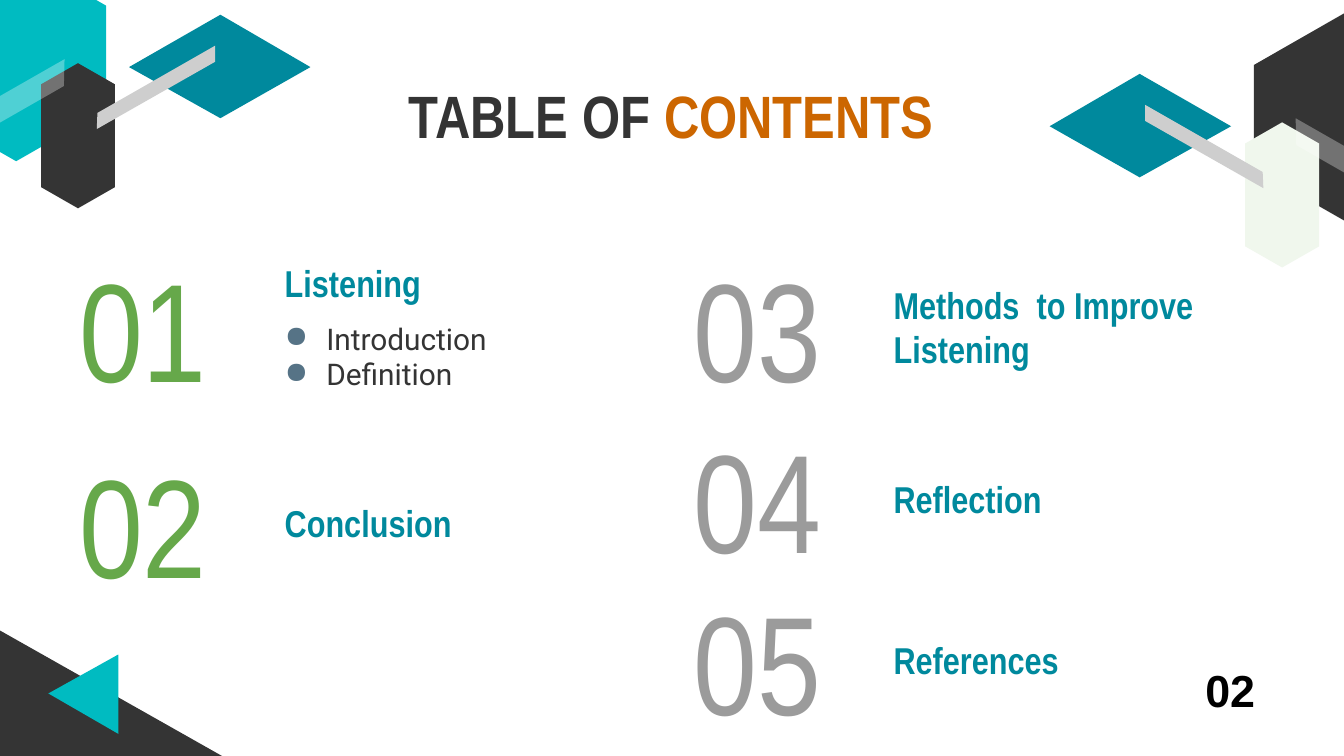
from pptx import Presentation
from pptx.dml.color import RGBColor
from pptx.enum.shapes import MSO_SHAPE
from pptx.enum.text import MSO_ANCHOR, PP_ALIGN
from pptx.util import Inches, Pt
from lxml import etree
from pptx.oxml.ns import qn

HEXAGON = MSO_SHAPE.HEXAGON
TOP, MIDDLE = MSO_ANCHOR.TOP, MSO_ANCHOR.MIDDLE
LEFT, CENTER = PP_ALIGN.LEFT, PP_ALIGN.CENTER
COLORS = {
    "dark": "343434", "teal": "00899D", "aqua": "00BBC1", "mint": "F0F7ED",
    "silver": "CECECE", "white": "FFFFFF", "green": "66A84A", "gray": "9B9B9B",
    "orange": "CC6600", "black": "000000", "bullet": "567386",
}
NARROW = "Arial Narrow"

deck = Presentation()
deck.slide_width, deck.slide_height = Inches(10), Inches(5.625)
# The grid has 100 columns and 56.25 rows, so its cells are square.
COLUMN = deck.slide_width / 100
ROW = deck.slide_height / 56.25
page = deck.slides.add_slide(deck.slide_layouts[6])


def paint(shape, color):
    shape.shadow.inherit = False
    shape.fill.solid()
    shape.fill.fore_color.rgb = RGBColor.from_string(COLORS[color])
    shape.line.fill.background()
    return shape


def add_text(paragraphs, left, top, width, height, size=20, font=NARROW, bold=False,
             align=LEFT, anchor=MIDDLE, inset=1, bulleted=False):
    """Add a box at a grid position; each paragraph is a list of (text, color)."""
    box = page.shapes.add_textbox(round(left * COLUMN), round(top * ROW),
                                  round(width * COLUMN), round(height * ROW))
    frame = box.text_frame
    frame.word_wrap = True
    frame.vertical_anchor = anchor
    frame.margin_left = frame.margin_right = round(COLUMN)
    frame.margin_top = frame.margin_bottom = round(inset * ROW)
    for index, spans in enumerate(paragraphs):
        para = frame.add_paragraph() if index else frame.paragraphs[0]
        para.alignment = align
        for text, color in spans:
            span = para.add_run()
            span.text = text
            span.font.size = Pt(size)
            span.font.name = font
            span.font.bold = bold
            span.font.color.rgb = RGBColor.from_string(COLORS[color])
        if bulleted:
            properties = para._p.get_or_add_pPr()
            indent = round(3.1 * COLUMN)
            properties.set("marL", str(indent))
            properties.set("indent", str(-indent))
            bullet_color = etree.SubElement(properties, qn("a:buClr"))
            etree.SubElement(bullet_color, qn("a:srgbClr"), val=COLORS["bullet"])
            etree.SubElement(properties, qn("a:buChar"), char="●")


# Corner ornaments: the right one mirrors the left one, 4.4 rows lower.
DIAMOND = [(16.4, 1.1), (9.6, 5), (16.4, 8.8), (23.1, 5)]
STICK = [(7.25, 8.4), (16, 3.4), (16, 4.6), (7.2, 9.6)]
GLINT = [(-10.1, 12.9), (4.8, 4.4), (4.75, 6.4), (-10.1, 14.9)]
MIRROR_SUM = 101.2
polygons = {
    "triangle ground": ("dark", [(-0.2, 46.8), (-16.9, 56.3), (-0.2, 65.9), (16.6, 56.3)]),
    "arrow": ("aqua", [(8.8, 48.7), (3.6, 51.6), (8.8, 54.6)]),
}
for mirrored, large_color, small_color in ((True, "dark", "mint"), (False, "aqua", "dark")):
    drop = 4.4 if mirrored else 0
    parts = [
        (large_color, (-6.5, -2.4, 15.4, 13.4)),
        ("teal", DIAMOND),
        (small_color, (0.4, 7.35, 10.8, 5.5)),
        ("silver", STICK),
        ("white", GLINT),
    ]
    for color, outline in parts:
        if isinstance(outline, tuple):
            left, top, width, height = outline
            if mirrored:
                left = MIRROR_SUM - left - width
            hexagon = paint(page.shapes.add_shape(
                HEXAGON, round(left * COLUMN), round((top + drop) * ROW),
                round(width * COLUMN), round(height * ROW)), color)
            hexagon.adjustments[0] = 0.286
            hexagon.rotation = 270 if mirrored else 90
        else:
            points = [(MIRROR_SUM - x if mirrored else x, y + drop) for x, y in outline]
            polygons[(mirrored, color)] = (color, points)
            corners = [(round(x * COLUMN), round(y * ROW)) for x, y in points]
            builder = page.shapes.build_freeform(*corners[0])
            builder.add_line_segments(corners[1:], close=True)
            shape = paint(builder.convert_to_shape(), color)
            if outline is GLINT:
                tint = shape._element.spPr.find(".//" + qn("a:srgbClr"))
                etree.SubElement(tint, qn("a:alpha"), val="31000")

# Bottom left corner
for name in ("triangle ground", "arrow"):
    color, points = polygons[name]
    corners = [(round(x * COLUMN), round(y * ROW)) for x, y in points]
    builder = page.shapes.build_freeform(*corners[0])
    builder.add_line_segments(corners[1:], close=True)
    paint(builder.convert_to_shape(), color)

# Title and page number
add_text([[("TABLE OF ", "dark"), ("CONTENTS", "orange")]], 12.7, 4.9, 74.5, 6.3,
         size=32, bold=True, align=CENTER, anchor=TOP)
add_text([[("02", "black")]], 88.7, 48.8, 6.5, 5, size=24, font="Arial", bold=True,
         anchor=TOP, inset=0.5)

# Contents: number, its left, top and color, then heading, its left, top and height
entries = [
    ("01", 4.9, 19.2, "green", "Listening", 20.2, 19.4, 3.2),
    ("02", 4.9, 33.8, "green", "Conclusion", 20.2, 34.9, 7.9),
    ("03", 50.6, 19.2, "gray", "Methods  to Improve Listening", 65.5, 20.8, 7),
    ("04", 50.6, 31.9, "gray", "Reflection", 65.5, 35.5, 3.2),
    ("05", 50.6, 44, "gray", "References", 65.5, 47.5, 3.2),
]
for number, left, top, color, heading, heading_left, heading_top, heading_height in entries:
    add_text([[(number, color)]], left, top, 14.6, 10.2, size=75)
    add_text([[(heading, "teal")]], heading_left, heading_top, 26.5, heading_height, bold=True)

add_text([[("Introduction", "dark")], [("Definition", "dark")]], 20.2, 23.6, 18.7, 5.8,
         size=16, font="Roboto", bulleted=True)

deck.save("out.pptx")
